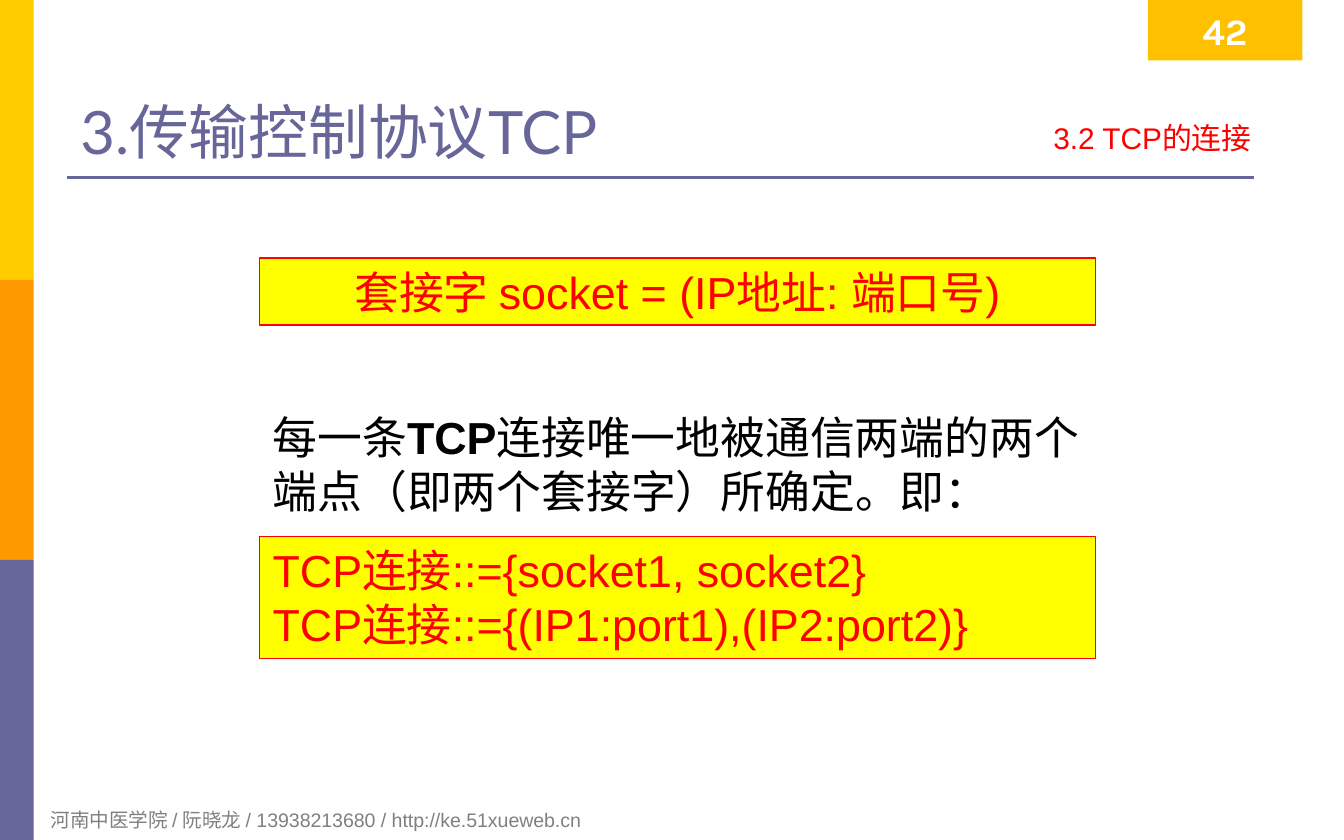
from dataclasses import dataclass

from lxml.etree import SubElement
from pptx import Presentation
from pptx.dml.color import RGBColor
from pptx.enum.shapes import MSO_CONNECTOR as Connector, MSO_SHAPE as Shape
from pptx.enum.text import MSO_ANCHOR as Anchor, PP_ALIGN as Align
from pptx.oxml.ns import qn
from pptx.util import Inches, Pt

UNIT = Inches(0.25)
COLUMNS, ROWS = 40, 25


@dataclass(frozen=True)
class Theme:
    """Colours, fonts and type sizes of the deck."""
    gold: str = "FFCC00"
    orange: str = "FF9900"
    violet: str = "666699"
    badge: str = "FFC000"
    yellow: str = "FFFF00"
    red: str = "FF0000"
    grey: str = "808080"
    black: str = "000000"
    white: str = "FFFFFF"
    body_font: str = "Arial"
    title_font: str = "Lato"
    badge_font: str = "Karla"
    title_size: float = 32
    body_size: float = 24
    badge_size: float = 20
    topic_size: float = 16
    footer_size: float = 10.5


@dataclass(frozen=True)
class Box:
    """A rectangle in grid columns and rows."""
    left: float
    top: float
    width: float
    height: float

    def inner(self, left, top, width, height):
        """Return a box placed relative to this one."""
        return Box(self.left + left, self.top + top, width, height)

    def lengths(self):
        """Return left, top, width and height as slide lengths."""
        return [round(value * UNIT) for value in
                (self.left, self.top, self.width, self.height)]


THEME = Theme()


def add_panel(slide, box, fill, line=None):
    """Add a flat rectangle, outlined when a line colour is given."""
    shape = slide.shapes.add_shape(Shape.RECTANGLE, *box.lengths())
    shape.shadow.inherit = False
    shape.fill.solid()
    shape.fill.fore_color.rgb = RGBColor.from_string(fill)
    if line:
        shape.line.color.rgb = RGBColor.from_string(line)
        shape.line.width = Pt(0.75)
    else:
        shape.line.fill.background()
    return shape


def add_label(slide, box):
    """Add an empty text box."""
    return slide.shapes.add_textbox(*box.lengths())


def write(shape, paragraphs, size, color, font=THEME.body_font, bold=False,
          align=Align.LEFT, anchor=Anchor.TOP):
    """Fill a shape with paragraphs in one style."""
    frame = shape.text_frame
    frame.text = "\n".join(paragraphs)
    frame.word_wrap = True
    frame.vertical_anchor = anchor
    for paragraph in frame.paragraphs:
        paragraph.alignment = align
        for run in paragraph.runs:
            style(run, size, color, font, bold)


def style(run, size, color, font, bold):
    """Set the type of one run."""
    run.font.size = Pt(size)
    run.font.name = font
    run.font.bold = bold
    run.font.color.rgb = RGBColor.from_string(color)


def draw_sidebar(slide, box):
    """Stack three equal colour bands."""
    colors = (THEME.gold, THEME.orange, THEME.violet)
    height = box.height / len(colors)
    for index, color in enumerate(colors):
        add_panel(slide, box.inner(0, index * height, box.width, height), color)


def draw_header(slide, box):
    """Place the rule, title, page badge and section topic."""
    left, top, width, _ = box.inner(0, 5.28, 35.32, 0).lengths()
    rule = slide.shapes.add_connector(Connector.STRAIGHT, left, top, left + width, top)
    rule.line.color.rgb = RGBColor.from_string(THEME.violet)
    rule.line.width = Pt(1.5)
    SubElement(rule.element.spPr, qn("a:effectLst"))
    write(add_label(slide, box.inner(0, 1, 36, 4.16)), ["3.传输控制协议TCP"],
          THEME.title_size, THEME.violet, THEME.title_font, anchor=Anchor.BOTTOM)
    write(add_panel(slide, box.inner(32.16, 0, 4.6, 1.8), THEME.badge), ["42"],
          THEME.badge_size, THEME.white, THEME.badge_font, True,
          Align.CENTER, Anchor.MIDDLE)
    write(add_label(slide, box.inner(23.04, 3.36, 12.6, 1.56)), ["3.2 TCP的连接"],
          THEME.topic_size, THEME.red, align=Align.RIGHT)


def draw_body(slide, box):
    """Place the socket formula, the explanation and the connection formulas."""
    socket = add_panel(slide, box.inner(0, 0, box.width, 2), THEME.yellow, THEME.red)
    write(socket, ["套接字 socket = (IP地址: 端口号)"], THEME.body_size,
          THEME.red, align=Align.CENTER)
    explanation = add_label(slide, box.inner(0, 4.32, box.width, 3.64))
    write(explanation, ["每一条"], THEME.body_size, THEME.black)
    paragraph = explanation.text_frame.paragraphs[0]
    for text, bold in (("TCP", True),
                       ("连接唯一地被通信两端的两个端点（即两个套接字）所确定。即：", False)):
        run = paragraph.add_run()
        run.text = text
        style(run, THEME.body_size, THEME.black, THEME.body_font, bold)
    connection = add_panel(slide, box.inner(0, 8.28, box.width, 3.64),
                           THEME.yellow, THEME.red)
    write(connection, ["TCP连接::={socket1, socket2}",
                       "TCP连接::={(IP1:port1),(IP2:port2)}"],
          THEME.body_size, THEME.red)


def draw_footer(slide, box):
    """Write the author line."""
    write(add_label(slide, box),
          ["河南中医学院 / 阮晓龙 / 13938213680 / http://ke.51xueweb.cn"],
          THEME.footer_size, THEME.grey)


def main():
    """Build and save the slide."""
    presentation = Presentation()
    presentation.slide_width = COLUMNS * UNIT
    presentation.slide_height = ROWS * UNIT
    slide = presentation.slides.add_slide(presentation.slide_layouts[6])
    draw_sidebar(slide, Box(0, 0, 1, ROWS))
    draw_footer(slide, Box(1.12, 23.84, 27.08, 1.12))
    draw_header(slide, Box(2, 0, 38, 6))
    draw_body(slide, Box(7.72, 7.68, 24.88, 11.92))
    presentation.save("out.pptx")


if __name__ == "__main__":
    main()
